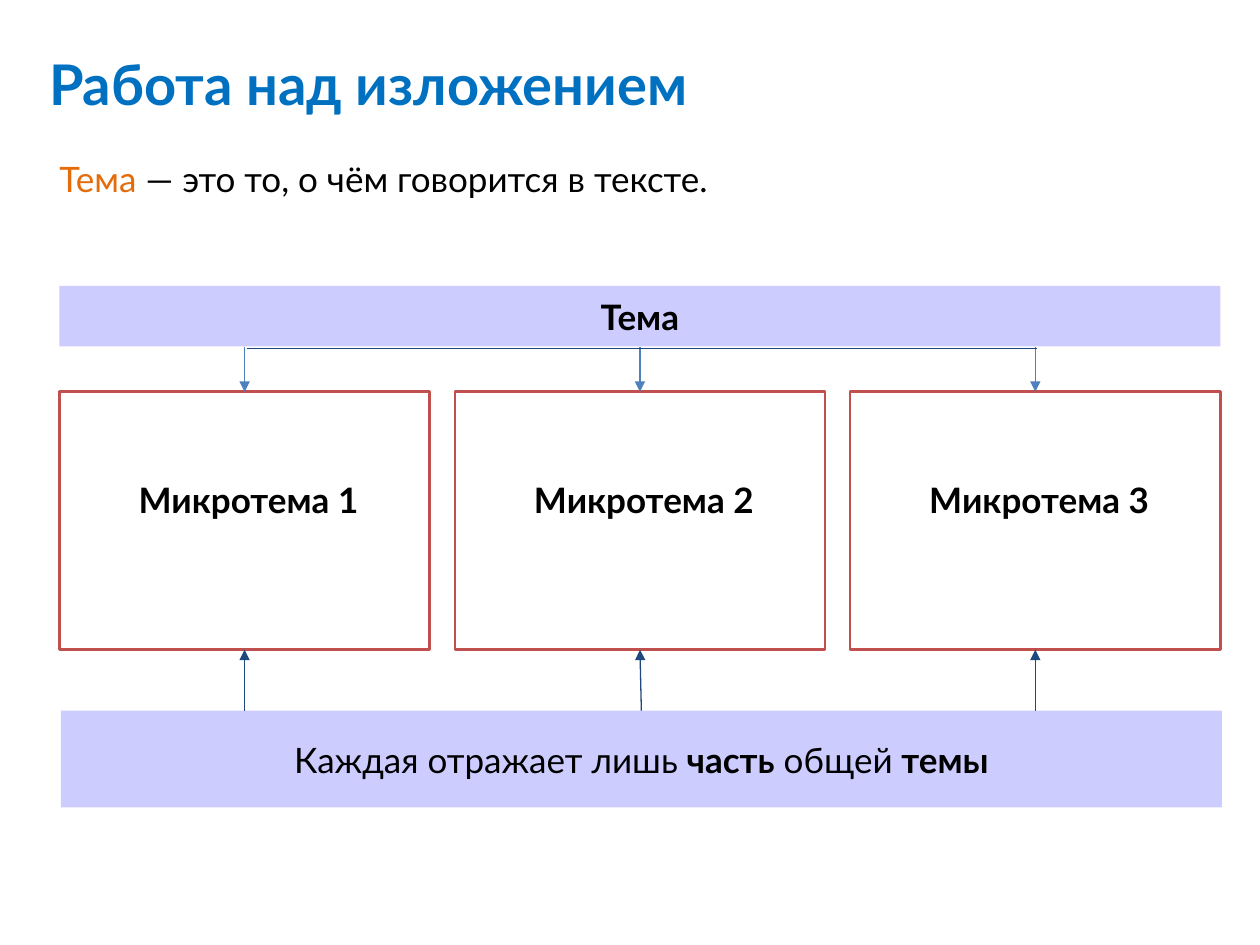
from pptx import Presentation
from pptx.dml.color import RGBColor
from pptx.enum.shapes import MSO_CONNECTOR, MSO_SHAPE
from pptx.enum.text import MSO_ANCHOR, MSO_AUTO_SIZE, PP_ALIGN
from pptx.oxml.ns import qn
from pptx.util import Pt
from lxml.etree import SubElement

LEFT, WIDTH = 34, 663.4
BAND, BAND_H = 163.4, 34.6
TOP, BOX_W, BOX_H = 223.9, 211.6, 147.4
FOOT, FOOT_H = 406.1, 55.4
STEP = (WIDTH - BOX_W) / 2


def color(code):
    """Return the colour for a hex string."""
    return RGBColor.from_string(code)


def write(frame, parts, size=20, bold=None, align=PP_ALIGN.LEFT):
    """Write one paragraph from (text, colour, bold) parts."""
    frame.word_wrap = True
    frame.auto_size = MSO_AUTO_SIZE.NONE
    par = frame.paragraphs[0]
    par.alignment = align
    par.space_before = Pt(0)
    par.font.name = "Lato"
    par.font.size = Pt(size)
    par.font.bold = bold
    for text, code, strong in parts:
        run = par.add_run()
        run.text = text
        run.font.color.rgb = color(code)
        if strong:
            run.font.bold = True
    return par


def pad(frame, left, top, right, bottom):
    """Set the four insets of a text frame."""
    frame.margin_left, frame.margin_top = Pt(left), Pt(top)
    frame.margin_right, frame.margin_bottom = Pt(right), Pt(bottom)


def head(holder, place, parts, size, bold=None):
    """Move a placeholder and fill it with one plain line."""
    holder.left, holder.top, holder.width, holder.height = map(Pt, place)
    frame = holder.text_frame
    frame.vertical_anchor = MSO_ANCHOR.TOP
    pad(frame, 0, 0, 0, 0)
    props = write(frame, parts, size, bold)._p.get_or_add_pPr()
    props.set("marL", "0")
    props.set("indent", "0")
    props.insert_element_before(props.makeelement(qn("a:buNone"), {}),
                                "a:tabLst", "a:defRPr", "a:extLst")


def block(slide, place, parts, fill, line=None, bold=None, inset=(7.2,) * 4):
    """Add a rectangle with centred text."""
    shape = slide.shapes.add_shape(MSO_SHAPE.RECTANGLE, *map(Pt, place))
    shape.shadow.inherit = False
    shape.fill.solid()
    shape.fill.fore_color.rgb = color(fill)
    if line:
        shape.line.color.rgb = color(line)
        shape.line.width = Pt(1.5)
    else:
        shape.line.fill.background()
    frame = shape.text_frame
    frame.vertical_anchor = MSO_ANCHOR.MIDDLE
    pad(frame, *inset)
    write(frame, parts, bold=bold, align=PP_ALIGN.CENTER)
    return shape


def link(slide, start, end, code, tip=True):
    """Add a straight line, with an arrowhead at its end if asked."""
    line = slide.shapes.add_connector(
        MSO_CONNECTOR.STRAIGHT, *map(Pt, start + end))
    line.line.color.rgb = color(code)
    line.line.width = Pt(0.75)
    if tip:
        SubElement(line.line._get_or_add_ln(), qn("a:tailEnd"), type="triangle")
    SubElement(line._element.spPr, qn("a:effectLst"))
    return line


def main():
    """Build the slide and save it."""
    deck = Presentation()
    deck.slide_width, deck.slide_height = Pt(720), Pt(540)
    slide = deck.slides.add_slide(deck.slide_layouts[1])
    head(slide.shapes.title, (28.1, 28.1, 663.1, 37.4),
         [("Работа над изложением", "0070C0", False)], 32, True)
    head(slide.placeholders[1], (LEFT, 90, WIDTH, 28.8),
         [("Тема", "E46C0A", False),
          (" — это то, о чём говорится в тексте.", "000000", False)], 20)

    theme = block(slide, (LEFT, BAND, WIDTH, BAND_H),
                  [("Тема", "000000", False)], "CCCCFF", bold=True)
    foot = block(slide, (LEFT + 0.8, FOOT, WIDTH, FOOT_H),
                 [("Каждая отражает лишь", "000000", False),
                  (" часть", "000000", True),
                  (" общей", "000000", False),
                  (" темы", "000000", True)], "CCCCFF")

    base = BAND + BAND_H
    for col in range(3):
        left = LEFT + col * STEP
        mid = left + BOX_W / 2
        box = block(slide, (left, TOP, BOX_W, BOX_H),
                    [(f"Микротема {col + 1}", "000000", False)],
                    "FFFFFF", "C0504D", True, (11.5, 7.2, 7.2, 31.2))
        down = link(slide, (mid, base), (mid, TOP), "4F81BD")
        rise = link(slide, (mid, FOOT), (mid, TOP + BOX_H), "1F497D")
        down.end_connect(box, 0)
        rise.end_connect(box, 2)
        if col == 1:
            down.begin_connect(theme, 2)
            rise.begin_connect(foot, 0)
    first = LEFT + BOX_W / 2 + 1.2
    link(slide, (first, base + 1), (first + 2 * STEP, base + 1),
         "1F497D", False)
    deck.save("out.pptx")


if __name__ == "__main__":
    main()
